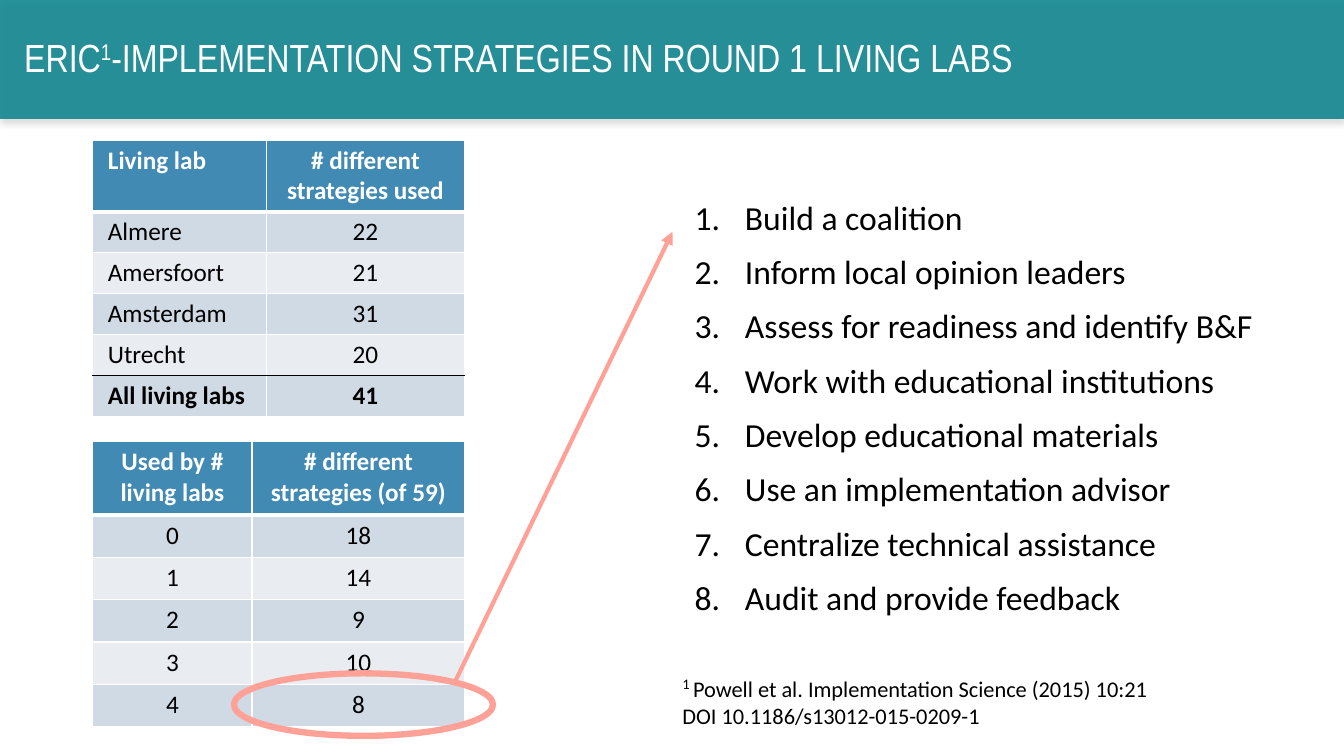
from lxml.etree import SubElement
from pptx import Presentation
from pptx.dml.color import RGBColor
from pptx.enum.shapes import MSO_CONNECTOR, MSO_SHAPE
from pptx.enum.text import MSO_ANCHOR, PP_ALIGN
from pptx.oxml import parse_xml
from pptx.oxml.ns import nsdecls, qn
from pptx.util import Inches, Pt

# Content
TITLE = [("ERIC", False), ("1", True),
         ("-IMPLEMENTATION STRATEGIES IN ROUND 1 LIVING LABS", False)]
LAB_ROWS = [
    ("Living lab", "# different strategies used"),
    ("Almere", "22"),
    ("Amersfoort", "21"),
    ("Amsterdam", "31"),
    ("Utrecht", "20"),
    ("All living labs", "41"),
]
USAGE_ROWS = [
    ("Used by # living labs", "# different strategies (of 59)"),
    ("0", "18"),
    ("1", "14"),
    ("2", "9"),
    ("3", "10"),
    ("4", "8"),
]
SHARED_STRATEGIES = [
    "Build a coalition",
    "Inform local opinion leaders",
    "Assess for readiness and identify B&F",
    "Work with educational institutions",
    "Develop educational materials",
    "Use an implementation advisor",
    "Centralize technical assistance",
    "Audit and provide feedback",
]
CITATION = "Powell et al. Implementation Science (2015) 10:21"
DOI = "DOI 10.1186/s13012-015-0209-1"

# Colours
TEAL = RGBColor(0x11, 0x86, 0x90)
BLUE = RGBColor(0x41, 0x8A, 0xB3)
BAND_DARK = RGBColor(0xCF, 0xDA, 0xE5)
BAND_LIGHT = RGBColor(0xE9, 0xED, 0xF2)
SALMON = RGBColor(0xFF, 0xA1, 0x97)
WHITE = RGBColor(0xFF, 0xFF, 0xFF)
BLACK = RGBColor(0, 0, 0)


def add_text(paragraph, text, size=18, color=BLACK, bold=False,
             font="Calibri", raised=False):
    run = paragraph.add_run()
    run.text = text
    run.font.size = Pt(size)
    run.font.name = font
    run.font.bold = bold
    run.font.color.rgb = color
    if raised:
        run.font._element.set("baseline", "30000")


def set_borders(cell, **edges):
    """Draw the four cell edges; each is a (colour, points) pair."""
    properties = cell._tc.get_or_add_tcPr()
    for position, edge in enumerate("LRTB"):
        color, width = edges.get(edge, (WHITE, 1))
        properties.insert(position, parse_xml(
            f'<a:ln{edge} {nsdecls("a")} w="{Pt(width)}"><a:solidFill>'
            f'<a:srgbClr val="{color}"/></a:solidFill></a:ln{edge}>'))


def add_data_table(rows, top, widths, header_height, row_height,
                   side_inset=0.1, label_align=PP_ALIGN.CENTER, total=False):
    height = header_height + row_height * (len(rows) - 1)
    table = slide.shapes.add_table(
        len(rows), len(widths), Inches(0.92), Inches(top),
        Inches(sum(widths)), Inches(height)).table
    for column, width in zip(table.columns, widths):
        column.width = Inches(width)
    last = len(rows) - 1
    for r, values in enumerate(rows):
        header = r == 0
        table.rows[r].height = Inches(header_height if header else row_height)
        edges = {}
        if header:
            edges["B"] = (WHITE, 3)
        elif r == 1:
            edges["T"] = (WHITE, 3)
        if total and r == last - 1:
            edges["B"] = (BLACK, 1)
        if total and r == last:
            edges["T"] = (BLACK, 1)
        for c, value in enumerate(values):
            cell = table.cell(r, c)
            cell.margin_left = cell.margin_right = Inches(side_inset)
            cell.fill.solid()
            cell.fill.fore_color.rgb = (
                BLUE if header else BAND_DARK if r % 2 else BAND_LIGHT)
            set_borders(cell, **edges)
            paragraph = cell.text_frame.paragraphs[0]
            paragraph.alignment = PP_ALIGN.CENTER if c else label_align
            add_text(paragraph, value, color=WHITE if header else BLACK,
                     bold=header or (total and r == last))


presentation = Presentation()
presentation.slide_width = Inches(13.33)
presentation.slide_height = Inches(7.5)
slide = presentation.slides.add_slide(presentation.slide_layouts[5])

# Title banner, placed behind the title
banner = slide.shapes.add_shape(MSO_SHAPE.RECTANGLE, 0, 0,
                                presentation.slide_width, Inches(1.18))
banner.fill.solid()
banner.fill.fore_color.rgb = TEAL
banner.line.fill.background()
banner_color = banner._element.spPr.find(qn("a:solidFill"))[0]
SubElement(banner_color, qn("a:alpha"), val="90000")
banner._element.spPr.append(parse_xml(
    f'<a:effectLst {nsdecls("a")}><a:outerShdw blurRad="{Pt(4)}" '
    f'dist="{Pt(3)}" dir="5400000" algn="t" rotWithShape="0">'
    '<a:srgbClr val="A6A6A6"><a:alpha val="40000"/></a:srgbClr>'
    '</a:outerShdw></a:effectLst>'))
slide.shapes._spTree.insert(2, banner._element)

# Title
title = slide.shapes.title
title.left, title.top = Inches(0.14), Inches(0.2)
title.width, title.height = Inches(11.5), Inches(0.78)
title.text_frame.vertical_anchor = MSO_ANCHOR.MIDDLE
title_line = title.text_frame.paragraphs[0]
title_line.alignment = PP_ALIGN.LEFT
title_line.line_spacing = 0.9
for part, raised in TITLE:
    add_text(title_line, part, size=28, color=WHITE, font="Arial Narrow",
             raised=raised)

# Tables
add_data_table(LAB_ROWS, 1.39, (1.72, 1.97), 0.71, 0.4, side_inset=0.15,
               label_align=PP_ALIGN.LEFT, total=True)
add_data_table(USAGE_ROWS, 4.38, (1.58, 2.11), 0.73, 0.42)

# Numbered strategies
strategies = slide.shapes.add_textbox(Inches(6.79), Inches(1.9),
                                      Inches(5.88), Inches(4.86)).text_frame
strategies.word_wrap = True
for i, strategy in enumerate(SHARED_STRATEGIES):
    item = strategies.add_paragraph() if i else strategies.paragraphs[0]
    if i:
        item.space_before = Pt(10)
    numbering = item._p.get_or_add_pPr()
    numbering.set("marL", str(Inches(0.5)))
    numbering.set("indent", str(-Inches(0.5)))
    SubElement(numbering, qn("a:buFont"), typeface="+mj-lt")
    SubElement(numbering, qn("a:buAutoNum"), type="arabicPeriod")
    add_text(item, strategy, size=24)

# Ring around the shared strategies and arrow to their list
ring = slide.shapes.add_shape(MSO_SHAPE.OVAL, Inches(2.32), Inches(6.68),
                              Inches(2.57), Inches(0.62))
ring.shadow.inherit = False
ring.fill.background()
ring.line.color.rgb = SALMON
ring.line.width = Pt(4.5)

arrow = slide.shapes.add_connector(MSO_CONNECTOR.STRAIGHT, Inches(4.51),
                                   Inches(6.77), Inches(6.67), Inches(2.3))
arrow.line.color.rgb = SALMON
arrow.line.width = Pt(3)
SubElement(arrow.line._get_or_add_ln(), qn("a:tailEnd"), type="triangle")
SubElement(arrow._element.spPr, qn("a:effectLst"))

# Reference
reference = slide.shapes.add_textbox(Inches(6.67), Inches(6.62),
                                     Inches(6.5), Inches(0.67)).text_frame
reference.word_wrap = True
add_text(reference.paragraphs[0], "1 ", raised=True)
add_text(reference.paragraphs[0], CITATION, size=16)
add_text(reference.add_paragraph(), DOI, size=16)

presentation.save("out.pptx")
